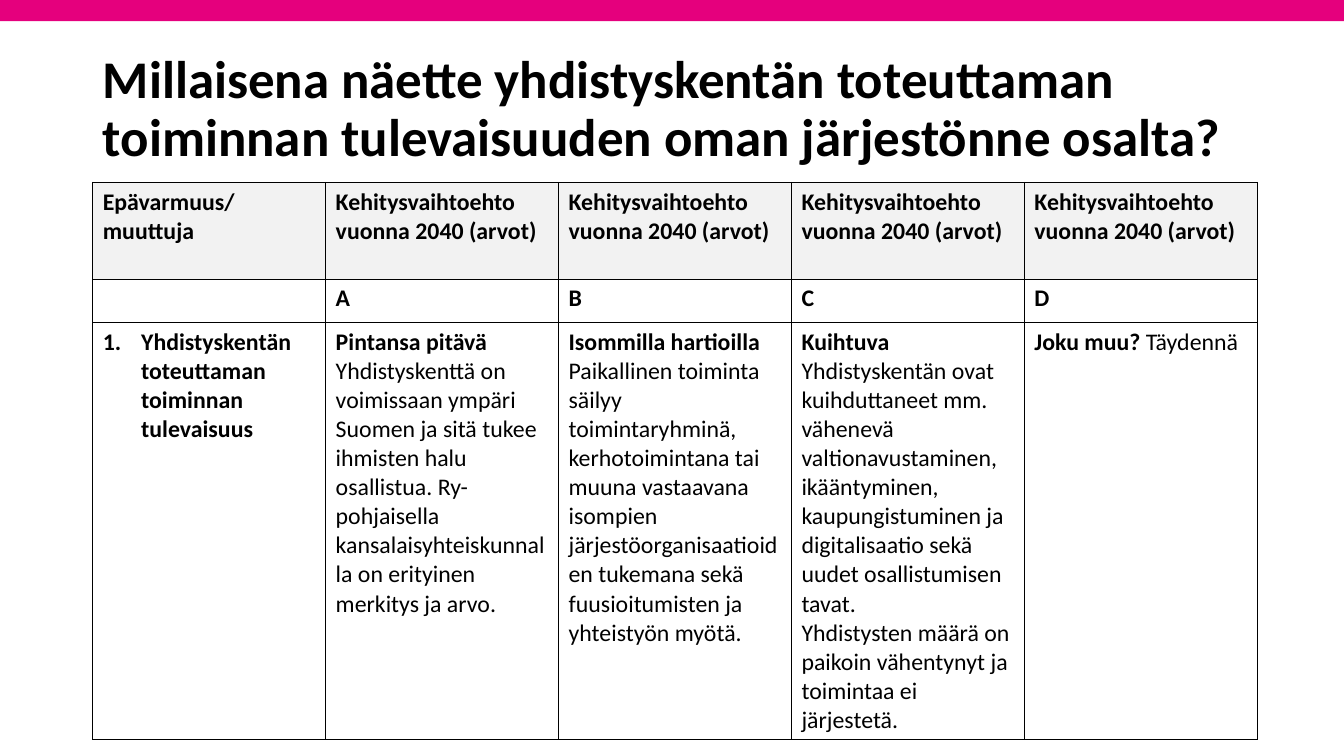
from lxml.etree import SubElement
from pptx import Presentation
from pptx.dml.color import RGBColor
from pptx.enum.shapes import MSO_SHAPE
from pptx.enum.text import MSO_ANCHOR, MSO_AUTO_SIZE, PP_ALIGN
from pptx.oxml.ns import qn
from pptx.util import Inches, Pt

INK, PINK, GREY, WHITE = "000000", "E5007D", "F2F2F2", "FFFFFF"
OPTION = "Kehitysvaihtoehto vuonna 2040 (arvot)"
HEADS = ["Epävarmuus/\nmuuttuja"] + [OPTION] * 4
MARKS = ["", "A", "B", "C", "D"]
TOPIC = "Yhdistyskentän toteuttaman toiminnan tulevaisuus"
FUTURES = [
    ("Pintansa pitävä\n",
     "Yhdistyskenttä on voimissaan ympäri Suomen ja sitä tukee ihmisten halu "
     "osallistua. Ry-pohjaisella kansalaisyhteiskunnalla on erityinen "
     "merkitys ja arvo."),
    ("Isommilla hartioilla\n",
     "Paikallinen toiminta säilyy toimintaryhminä, kerhotoimintana tai muuna "
     "vastaavana isompien järjestöorganisaatioiden tukemana sekä "
     "fuusioitumisten ja yhteistyön myötä."),
    ("Kuihtuva\n",
     "Yhdistyskentän ovat kuihduttaneet mm. vähenevä valtionavustaminen, "
     "ikääntyminen, kaupungistuminen ja digitalisaatio sekä uudet "
     "osallistumisen tavat.\nYhdistysten määrä on paikoin vähentynyt ja "
     "toimintaa ei järjestetä."),
    ("Joku muu? ", "Täydennä"),
]


def color(code):
    return RGBColor.from_string(code)


class Deck:
    """Holds the text style and the current slide, and draws its elements."""

    def __init__(self, face="Calibri", size=17):
        self.face, self.size = face, size
        self.show = Presentation()
        self.show.slide_width = Inches(13.33)
        self.show.slide_height = Inches(7.5)
        self.slide = self.show.slides.add_slide(self.show.slide_layouts[5])

    def style(self, para, size, bold=None):
        font = para.font
        font.name, font.size, font.bold = self.face, Pt(size), bold
        font.color.rgb = color(INK)

    def band(self, box, fill):
        bar = self.slide.shapes.add_shape(MSO_SHAPE.RECTANGLE, *map(Inches, box))
        bar.shadow.inherit = False
        bar.fill.solid()
        bar.fill.fore_color.rgb = color(fill)
        bar.line.fill.background()

    def title(self, box, text, size):
        head = self.slide.shapes.title
        head.left, head.top, head.width, head.height = map(Inches, box)
        frame = head.text_frame
        frame.text = text
        frame.word_wrap = True
        frame.auto_size = MSO_AUTO_SIZE.NONE
        frame.vertical_anchor = MSO_ANCHOR.MIDDLE
        para = frame.paragraphs[0]
        para.alignment = PP_ALIGN.LEFT
        para.line_spacing = 0.9
        self.style(para, size, True)

    def table(self, box, heights, cols):
        frame = self.slide.shapes.add_table(len(heights), cols, *map(Inches, box))
        grid = frame.table
        for row, height in zip(grid.rows, heights):
            row.height = Inches(height)
        for col in grid.columns:
            col.width = Inches(box[2] / cols)
        return grid

    def cell(self, cell, text, fill=WHITE):
        cell.text = text
        for para in cell.text_frame.paragraphs:
            self.style(para, self.size, True)
        self.frame(cell, fill)

    def item(self, cell, text):
        cell.text = text
        para = cell.text_frame.paragraphs[0]
        props = para._p.get_or_add_pPr()
        props.set("marL", str(Inches(0.38)))
        props.set("indent", str(-Inches(0.38)))
        SubElement(props, qn("a:buFont"), typeface="+mj-lt")
        SubElement(props, qn("a:buAutoNum"), type="arabicPeriod")
        self.style(para, self.size, True)
        self.frame(cell, WHITE)

    def story(self, cell, name, body):
        para = cell.text_frame.paragraphs[0]
        self.style(para, self.size)
        for text, bold in ((name, True), (body, False)):
            for num, line in enumerate(text.split("\n")):
                if num:
                    para.add_line_break()
                if line:
                    run = para.add_run()
                    run.text = line
                    run.font.bold = bold
        self.frame(cell, WHITE)

    def frame(self, cell, fill):
        props = cell._tc.get_or_add_tcPr()
        for side in ("lnL", "lnR", "lnT", "lnB"):
            line = SubElement(props, qn(f"a:{side}"), w=str(Pt(1)))
            paint = SubElement(line, qn("a:solidFill"))
            SubElement(paint, qn("a:srgbClr"), val=INK)
        cell.fill.solid()
        cell.fill.fore_color.rgb = color(fill)


def main():
    deck = Deck()
    deck.band((0, -0.05, 13.33, 0.26), PINK)
    deck.title((0.92, 0.57, 11.5, 1.05),
               "Millaisena näette yhdistyskentän toteuttaman toiminnan "
               "tulevaisuuden oman järjestönne osalta?", 37.8)
    grid = deck.table((0.92, 1.81, 11.55, 5.52), (0.96, 0.43, 4.13), len(HEADS))
    for col, (head, mark) in enumerate(zip(HEADS, MARKS)):
        deck.cell(grid.cell(0, col), head, GREY)
        deck.cell(grid.cell(1, col), mark)
    deck.item(grid.cell(2, 0), TOPIC)
    for col, (name, body) in enumerate(FUTURES, 1):
        deck.story(grid.cell(2, col), name, body)
    deck.show.save("out.pptx")


if __name__ == "__main__":
    main()
